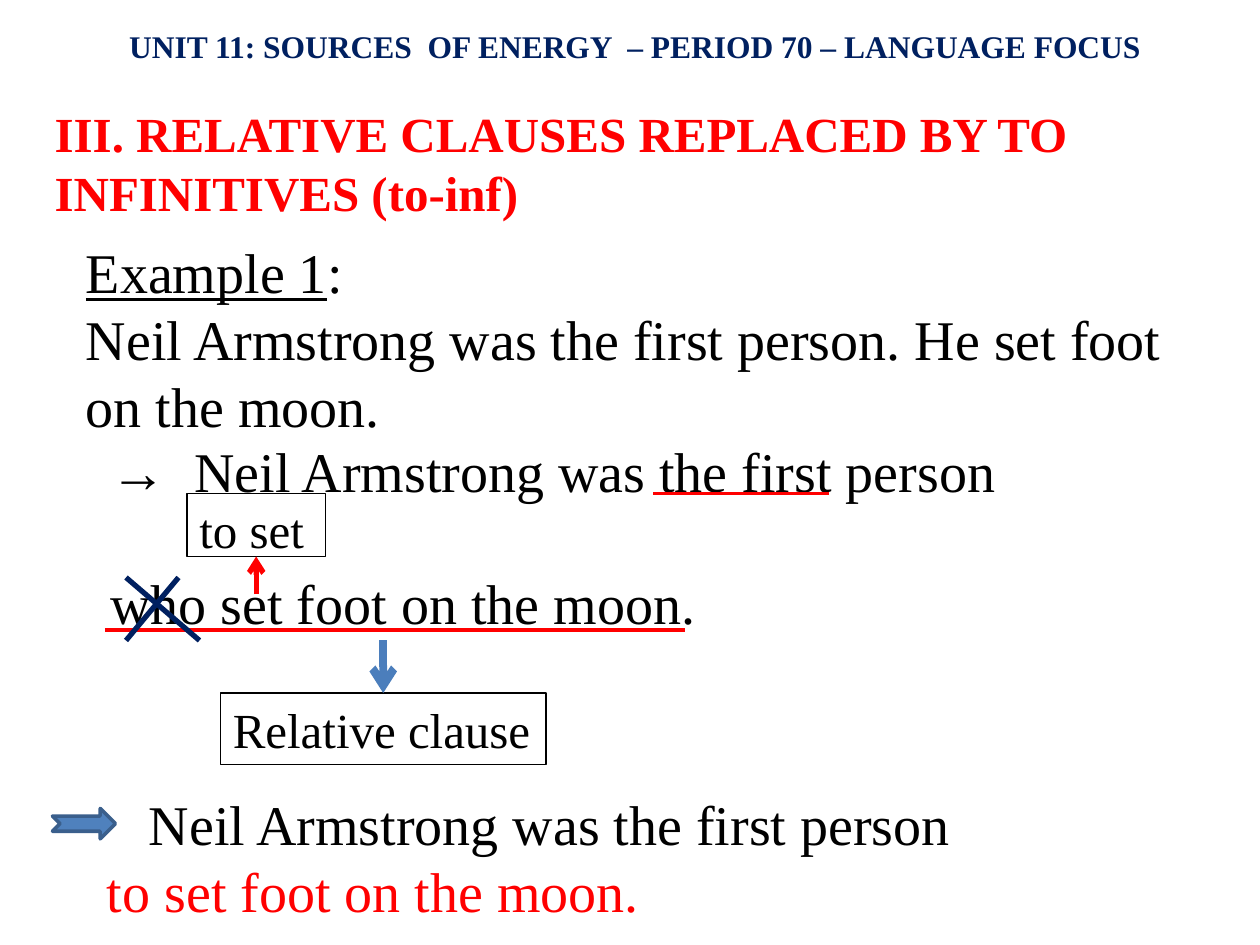
import pptx
import pptx.util
import pptx.dml.color
import pptx.enum.shapes
import pptx.enum.text
import pptx.oxml.ns
from lxml import etree

Pt = pptx.util.Pt
Kind = pptx.enum.shapes.MSO_SHAPE
Fit = pptx.enum.text.MSO_AUTO_SIZE
Align = pptx.enum.text.PP_ALIGN
FONT = "Times New Roman"
INK = {"black": "000000", "red": "FF0000", "navy": "002060",
       "blue": "4B7EBC", "fill": "4F81BD", "edge": "3A5F8C"}


def cell(count):
    """Grid of 120 columns by 90 rows: each cell is 1/12 inch."""
    return pptx.util.Inches(count / 12)


def shift(box, x, y):
    return box[0] + x, box[1] + y


def tint(name):
    return pptx.dml.color.RGBColor.from_string(INK[name])


def style(para, size, ink="black", bold=None):
    for run in para.runs:
        font = run.font
        font.name, font.size, font.bold = FONT, Pt(size), bold
        font.color.rgb = tint(ink)


def write(slide, box, lines, size=32, ink="black", bold=None):
    shape = slide.shapes.add_textbox(*map(cell, box))
    frame = shape.text_frame
    frame.word_wrap = True
    frame.text = "\n".join(lines)
    for para in frame.paragraphs:
        style(para, size, ink, bold)
    return frame.paragraphs


def indent(para, cols):
    props = para._p.get_or_add_pPr()
    props.set("marL", str(cell(cols)))
    props.set("indent", "0")


def stroke(slide, start, end, ink, width, arrow=False):
    line = slide.shapes.add_connector(
        pptx.enum.shapes.MSO_CONNECTOR.STRAIGHT,
        *map(cell, (*start, *end)))
    line.line.color.rgb = tint(ink)
    line.line.width = Pt(width)
    props = line._element.spPr
    if arrow:
        tip = pptx.oxml.ns.qn("a:tailEnd")
        etree.SubElement(line.line._get_or_add_ln(), tip, type="arrow")
    etree.SubElement(props, pptx.oxml.ns.qn("a:effectLst"))
    return line


def label(slide, box, text, wrap):
    shape = slide.shapes.add_shape(Kind.RECTANGLE, *map(cell, box))
    shape.shadow.inherit = False
    shape.fill.background()
    shape.line.color.rgb = tint("black")
    shape.line.width = Pt(0.75)
    frame = shape.text_frame
    frame.text = text
    frame.word_wrap = wrap
    frame.vertical_anchor = pptx.enum.text.MSO_ANCHOR.TOP
    para = frame.paragraphs[0]
    para.alignment = Align.LEFT
    style(para, 28)
    return shape


def header(slide, box):
    text = "UNIT 11: SOURCES  OF ENERGY  – PERIOD 70 – LANGUAGE FOCUS"
    write(slide, box, [text], 18, "navy", True)[0].alignment = Align.CENTER


def title(slide, box):
    shape = slide.shapes.title
    shape.left, shape.top, shape.width, shape.height = map(cell, box)
    frame = shape.text_frame
    frame.text = "III. RELATIVE CLAUSES REPLACED BY TO INFINITIVES (to-inf)"
    frame.auto_size = Fit.NONE
    frame.vertical_anchor = pptx.enum.text.MSO_ANCHOR.MIDDLE
    para = frame.paragraphs[0]
    para.alignment = Align.LEFT
    style(para, 28, "red", True)


def example(slide, box):
    head = write(slide, box, [
        "Example 1:",
        "Neil Armstrong was the first person. He set foot on the moon."])[0]
    head.runs[0].text = "Example 1"
    head.runs[0].font.underline = True
    head.add_run().text = ":"
    style(head, 32)


def rewrite(slide, box):
    paras = write(slide, box, ["→  Neil Armstrong was the first person",
                               "who set foot on the moon."])
    for para in paras:
        indent(para, 1.33)
    paras[1].space_before = Pt(37)

    # Underlined phrases
    for left, right, row in ((54.2, 71, 6), (2, 57.2, 19)):
        stroke(slide, shift(box, left, row), shift(box, right, row),
               "red", 2.25)

    # Cross over "who"
    for top, foot in ((4, 11), (9, 4)):
        stroke(slide, shift(box, top, 14), shift(box, foot, 20), "navy", 3)

    # Labels, each with the arrow that points to it
    clause = label(slide, (*shift(box, 13, 25), 31, 6.8),
                   "Relative clause", False)
    down = stroke(slide, shift(box, 28.5, 20), shift(box, 28.5, 25),
                  "blue", 4.5, True)
    down.end_connect(clause, 0)
    verb = label(slide, (*shift(box, 9.8, 6), 13.2, 6), "to set", True)
    up = stroke(slide, shift(box, 16.4, 15.6), shift(box, 16.4, 12),
                "red", 3, True)
    up.end_connect(verb, 2)


def result(slide, box):
    paras = write(slide, box, ["Neil Armstrong was the first person",
                               "to set foot on the moon."])
    indent(paras[0], 4)
    style(paras[1], 32, "red")
    arrow = slide.shapes.add_shape(
        Kind.NOTCHED_RIGHT_ARROW, *map(cell, (*shift(box, -4, 2.4), 6, 2.9)))
    arrow.shadow.inherit = False
    arrow.fill.solid()
    arrow.fill.fore_color.rgb = tint("fill")
    arrow.line.color.rgb = tint("edge")
    arrow.line.width = Pt(2)


def main():
    deck = pptx.Presentation()
    deck.slide_width, deck.slide_height = cell(120), cell(90)
    slide = deck.slides.add_slide(deck.slide_layouts[5])
    title(slide, (4, 8, 116, 15))
    example(slide, (7, 22, 105, 20.6))
    rewrite(slide, (8, 41, 104.4, 20.6))
    result(slide, (9, 74.6, 94.8, 14.4))
    header(slide, (3, 2, 115, 4.8))
    deck.save("out.pptx")


if __name__ == "__main__":
    main()
